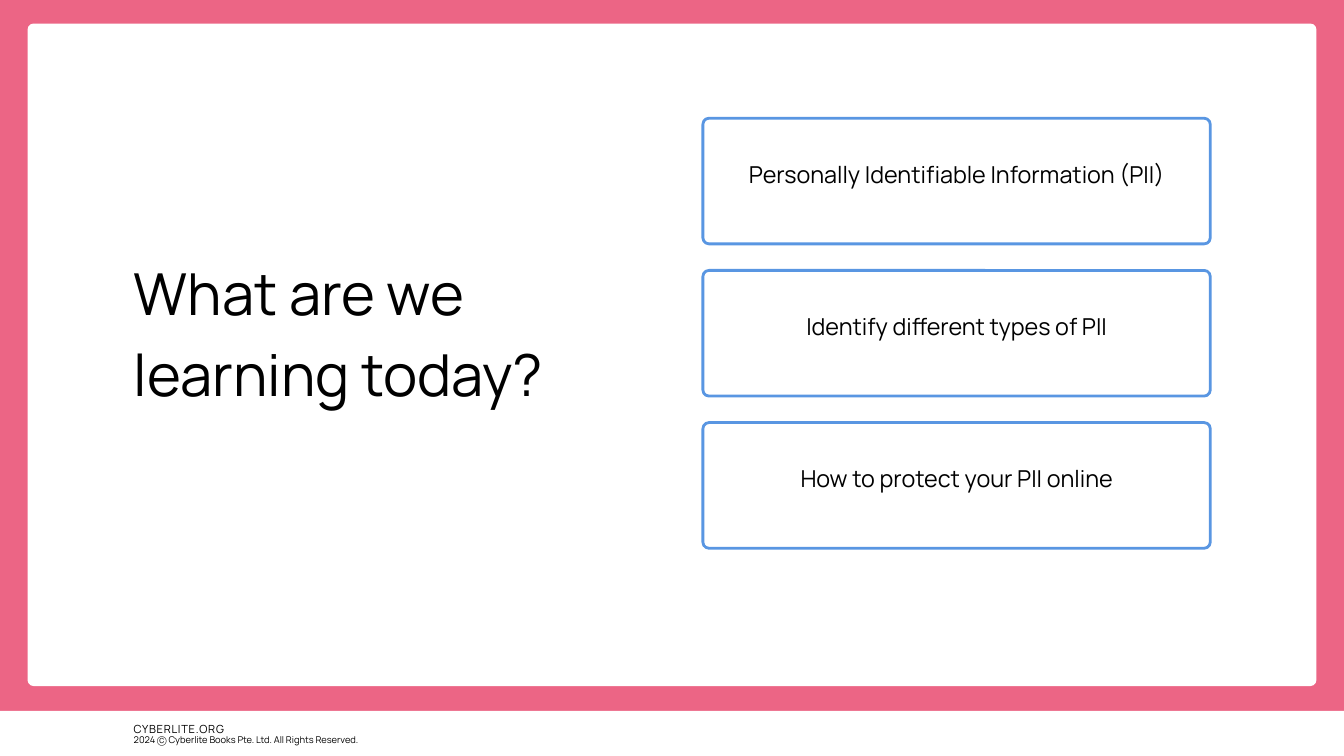
from dataclasses import dataclass, replace
from typing import Optional

from pptx import Presentation
from pptx.dml.color import RGBColor
from pptx.enum.shapes import MSO_SHAPE
from pptx.enum.text import MSO_ANCHOR, PP_ALIGN
from pptx.util import Inches, Pt

RECT, ROUNDED = MSO_SHAPE.RECTANGLE, MSO_SHAPE.ROUNDED_RECTANGLE
LEFT, CENTER = PP_ALIGN.LEFT, PP_ALIGN.CENTER
TOP, MIDDLE = MSO_ANCHOR.TOP, MSO_ANCHOR.MIDDLE

PINK = RGBColor(0xEC, 0x65, 0x85)
WHITE = RGBColor(0xFF, 0xFF, 0xFF)
BLUE = RGBColor(0x59, 0x96, 0xE2)
BLACK = RGBColor(0x00, 0x00, 0x00)

FONT = "Manrope"
WIDTH, HEIGHT = Inches(20), Inches(11.25)
RADIUS = Inches(0.09)
MARGIN = 9.95
CARD_PITCH = 20.13
CARD_TEXT_LIFT = 2.44
TOPICS = (
    "Personally Identifiable Information (PII)",
    "Identify different types of PII",
    "How to protect your PII online",
)


@dataclass(frozen=True)
class Box:
    """Position and size in percent of the slide's width and height."""

    x: float
    y: float
    w: float
    h: float

    def emu(self) -> tuple[int, int, int, int]:
        """Return left, top, width and height as lengths."""
        return (int(WIDTH * self.x / 100), int(HEIGHT * self.y / 100),
                int(WIDTH * self.w / 100), int(HEIGHT * self.h / 100))


@dataclass(frozen=True)
class Style:
    """Type size, line height and placement of a text."""

    size: float
    leading: float
    align: PP_ALIGN = LEFT
    anchor: MSO_ANCHOR = TOP
    inset: float = 0
    tracking: int = 0


FOOTER = Box(0, 94.04, 100, 5.96)
PANEL = Box(2.05, 3.11, 95.9, 87.64)
FIRST_CARD = Box(52.3, 15.64, 37.75, 16.62)
CARD_STYLE = Style(25, 35, CENTER, MIDDLE, 0.06)


def add_panel(s, box: Box, rounded: bool = True, line: Optional[RGBColor] = None) -> None:
    """Draw a white panel, with an outline if a line colour is given."""
    sp = s.shapes.add_shape(ROUNDED if rounded else RECT, *box.emu())
    sp.shadow.inherit = False
    if rounded:
        sp.adjustments[0] = RADIUS / min(sp.width, sp.height)
    sp.fill.solid()
    sp.fill.fore_color.rgb = WHITE
    if line is None:
        sp.line.fill.background()
    else:
        sp.line.color.rgb = line
        sp.line.width = Pt(3)


def add_text(s, box: Box, text: str, style: Style) -> None:
    """Write one paragraph in a text box."""
    tf = s.shapes.add_textbox(*box.emu()).text_frame
    tf.word_wrap = True
    tf.vertical_anchor = style.anchor
    tf.margin_left = tf.margin_right = Inches(style.inset)
    tf.margin_top = tf.margin_bottom = Inches(style.inset)
    p = tf.paragraphs[0]
    p.alignment = style.align
    p.line_spacing = Pt(style.leading)
    r = p.add_run()
    r.text = text
    r.font.name = FONT
    r.font.size = Pt(style.size)
    r.font.color.rgb = BLACK
    if style.tracking:
        r.font._element.set("spc", str(style.tracking))


def add_card(s, box: Box, text: str) -> None:
    """Draw an outlined card with its topic set slightly above the middle."""
    add_panel(s, box, line=BLUE)
    label = replace(box, y=box.y - CARD_TEXT_LIFT, h=box.h + CARD_TEXT_LIFT)
    add_text(s, label, text, CARD_STYLE)


def main() -> None:
    """Build the lesson overview slide."""
    prs = Presentation()
    prs.slide_width, prs.slide_height = WIDTH, HEIGHT
    s = prs.slides.add_slide(prs.slide_layouts[6])
    s.background.fill.solid()
    s.background.fill.fore_color.rgb = PINK

    add_panel(s, FOOTER, rounded=False)
    add_text(s, Box(MARGIN, 95.29, 9.25, 2.04), "CYBERLITE.ORG",
             Style(12, 16.8, tracking=80))
    add_text(s, Box(MARGIN, 96.89, 23.15, 1.69),
             "2024 Ⓒ Cyberlite Books Pte. Ltd. All Rights Reserved.", Style(10, 14))
    add_panel(s, PANEL)
    for row, topic in enumerate(TOPICS):
        add_card(s, replace(FIRST_CARD, y=FIRST_CARD.y + row * CARD_PITCH), topic)
    add_text(s, Box(MARGIN, 32.53, 36.1, 21.42), "What are we learning today?",
             Style(62, 86.8))
    prs.save("out.pptx")


if __name__ == "__main__":
    main()
